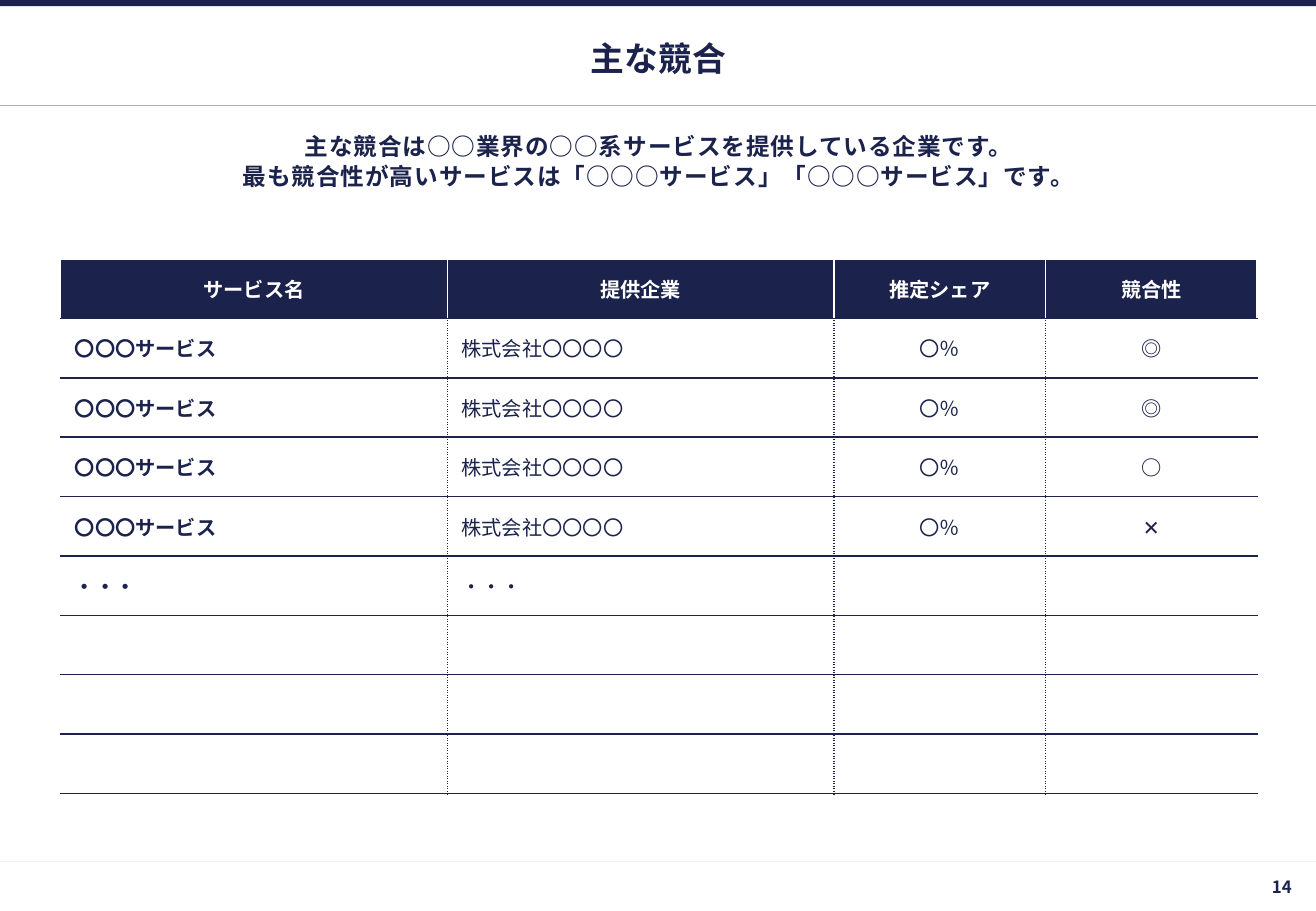
import dataclasses

import lxml.etree
import pptx
import pptx.dml.color
import pptx.enum.shapes
import pptx.enum.text
import pptx.oxml
import pptx.oxml.ns
import pptx.util

EMU_PER_PX = 7620  # 120 px to the inch
ALIGN = pptx.enum.text.PP_ALIGN
ANCHOR = pptx.enum.text.MSO_ANCHOR
qn = pptx.oxml.ns.qn


@dataclasses.dataclass(frozen=True)
class Theme:
    font: str = "Noto Sans CJK JP"
    navy: str = "1B224C"
    white: str = "FFFFFF"
    title_rule: str = "AFAFAF"
    footer_rule: str = "F2F2F2"
    title_size: int = 20
    message_size: int = 14
    table_size: int = 12
    page_size: int = 10
    rule_width: float = 0.75
    border_width: int = 1


THEME = Theme()
SLIDE_WIDTH, SLIDE_HEIGHT = 1300, 900
MARGIN, CONTENT_WIDTH = 60, 1181
TABLE_TOP, TABLE_HEIGHT = 256, 528
COLUMN_WIDTHS = (382, 382, 209, 209)

HEADERS = ("サービス名", "提供企業", "推定シェア", "競合性")
RIVALS = [("〇〇〇サービス", "株式会社〇〇〇〇", "〇％", mark) for mark in "◎◎○✕"]
BODY_ROWS = RIVALS + [("・・・", "・・・", "", "")] + [("",) * 4] * 3
BODY_ALIGNS = (ALIGN.LEFT, ALIGN.LEFT, ALIGN.CENTER, ALIGN.CENTER)
BODY_BOLD = (True, False, False, True)


def px(length):
    return pptx.util.Emu(length * EMU_PER_PX)


def rgb(color):
    return pptx.dml.color.RGBColor.from_string(color)


def set_attributes(target, formats):
    for name, value in formats.items():
        setattr(target, name, value)


def margins(left, top, right, bottom):
    sides = ("margin_left", "margin_top", "margin_right", "margin_bottom")
    return dict(zip(sides, map(px, (left, top, right, bottom))))


def write_paragraph(paragraph, text, size, color, bold=True, spacing=0, **formats):
    """Write one run; spacing is the letter gap in hundredths of a point."""
    set_attributes(paragraph, formats)
    run = paragraph.add_run()
    run.text = text
    set_attributes(run.font, {"name": THEME.font, "size": pptx.util.Pt(size), "bold": bold})
    run.font.color.rgb = rgb(color)
    properties = run.font._element
    if spacing:
        properties.set("spc", str(spacing))
    east_asian = lxml.etree.SubElement(properties, qn("a:ea"))
    east_asian.set("typeface", THEME.font)


def add_text(slide, box, lines, size, frame, **formats):
    text_frame = slide.shapes.add_textbox(*map(px, box)).text_frame
    set_attributes(text_frame, {"word_wrap": True, **frame})
    for index, line in enumerate(lines):
        paragraph = text_frame.add_paragraph() if index else text_frame.paragraphs[0]
        write_paragraph(paragraph, line, size, THEME.navy, **formats)


def add_bar(slide, box, color):
    shape = slide.shapes.add_shape(pptx.enum.shapes.MSO_SHAPE.RECTANGLE, *map(px, box))
    shape.shadow.inherit = False
    shape.fill.solid()
    shape.fill.fore_color.rgb = rgb(color)
    shape.line.fill.background()


def add_rule(slide, top, color):
    """Draw a horizontal line across the whole slide."""
    rule = slide.shapes.add_connector(
        pptx.enum.shapes.MSO_CONNECTOR.STRAIGHT, px(0), px(top), px(SLIDE_WIDTH), px(top))
    rule.line.color.rgb = rgb(color)
    rule.line.width = pptx.util.Pt(THEME.rule_width)
    lxml.etree.SubElement(rule._element.spPr, qn("a:effectLst"))


def set_borders(cell, borders):
    """Add (side, colour, dash) borders, given in the order L, R, T, B."""
    properties = cell._tc.get_or_add_tcPr()
    for index, (side, color, dash) in enumerate(borders):
        line = lxml.etree.Element(qn(f"a:ln{side}"))
        line.set("w", str(pptx.util.Pt(THEME.border_width)))
        fill = lxml.etree.SubElement(line, qn("a:solidFill"))
        lxml.etree.SubElement(fill, qn("a:srgbClr")).set("val", color)
        lxml.etree.SubElement(line, qn("a:prstDash")).set("val", dash)
        properties.insert(index, line)


def format_cell(cell, column, is_header):
    cell.fill.solid()
    cell.fill.fore_color.rgb = rgb(THEME.navy if is_header else THEME.white)
    divider = (THEME.white, "solid") if is_header else (THEME.navy, "sysDot")
    borders = []
    if column > 0:
        borders.append(("L", *divider))
    if column < len(HEADERS) - 1:
        borders.append(("R", *divider))
    if not is_header:
        borders.append(("T", THEME.navy, "solid"))
    borders.append(("B", THEME.navy, "solid"))
    set_borders(cell, borders)


def write_cell(cell, text, column, is_header):
    inset = 14 if is_header else 10
    set_attributes(cell, {"vertical_anchor": ANCHOR.MIDDLE, **margins(14, inset, 14, inset)})
    write_paragraph(
        cell.text_frame.paragraphs[0], text, THEME.table_size,
        THEME.white if is_header else THEME.navy,
        bold=is_header or BODY_BOLD[column],
        alignment=ALIGN.CENTER if is_header else BODY_ALIGNS[column])


def add_rival_table(slide):
    rows = [HEADERS, *BODY_ROWS]
    box = (MARGIN, TABLE_TOP, sum(COLUMN_WIDTHS), TABLE_HEIGHT)
    table = slide.shapes.add_table(len(rows), len(HEADERS), *map(px, box)).table
    set_attributes(table, {"first_row": False, "horz_banding": False})
    for column, width in zip(table.columns, COLUMN_WIDTHS):
        column.width = px(width)
    for row, texts in enumerate(rows):
        for column, text in enumerate(texts):
            cell = table.cell(row, column)
            format_cell(cell, column, row == 0)
            if text:
                write_cell(cell, text, column, row == 0)


def main():
    presentation = pptx.Presentation()
    set_attributes(presentation, {
        "slide_width": px(SLIDE_WIDTH), "slide_height": px(SLIDE_HEIGHT)})
    slide = presentation.slides.add_slide(presentation.slide_layouts[6])

    add_rule(slide, 851, THEME.footer_rule)
    add_bar(slide, (0, 0, SLIDE_WIDTH, 6), THEME.navy)
    add_rule(slide, 104, THEME.title_rule)
    add_text(
        slide, (MARGIN, 132, CONTENT_WIDTH, 80),
        ["主な競合は○○業界の○○系サービスを提供している企業です。",
         "最も競合性が高いサービスは「○○○サービス」「○○○サービス」です。"],
        THEME.message_size, margins(5, 5, 5, 5), spacing=50,
        alignment=ALIGN.CENTER, line_spacing=0.72, space_after=pptx.util.Pt(6))
    add_text(
        slide, (1068, 852, 232, 48), ["14"], THEME.page_size,
        {"vertical_anchor": ANCHOR.MIDDLE, **margins(5, 5, 24, 5)}, alignment=ALIGN.RIGHT)
    add_text(
        slide, (MARGIN, 31, CONTENT_WIDTH, 52), ["主な競合"], THEME.title_size,
        {"vertical_anchor": ANCHOR.MIDDLE}, alignment=ALIGN.CENTER)
    add_rival_table(slide)

    presentation.save("out.pptx")


if __name__ == "__main__":
    main()
